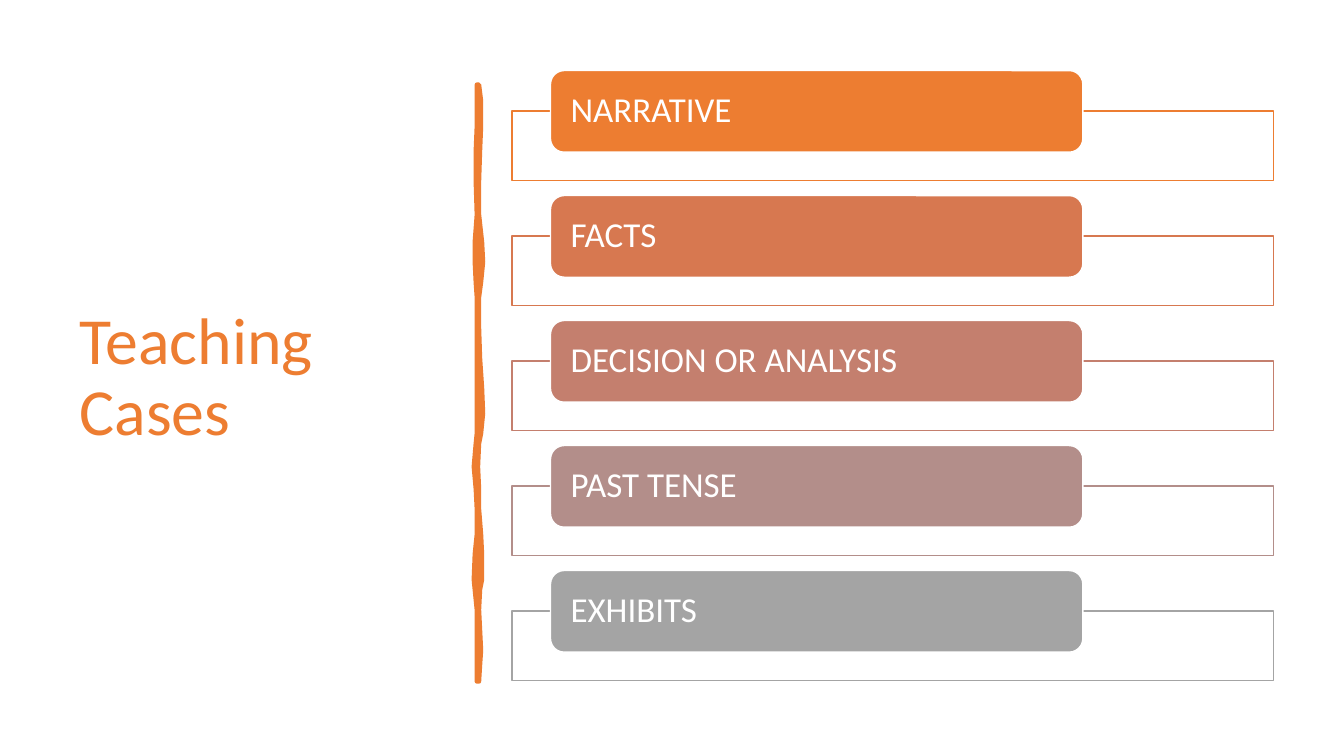
from dataclasses import dataclass

from lxml.etree import SubElement
from pptx import Presentation
from pptx.dml.color import RGBColor
from pptx.enum.shapes import MSO_SHAPE
from pptx.enum.text import MSO_ANCHOR, PP_ALIGN
from pptx.oxml.ns import qn
from pptx.util import Inches, Pt


@dataclass(frozen=True)
class Theme:
    font: str = "Calibri"
    accent: str = "ED7D31"
    white: str = "FFFFFF"
    title: int = 47
    label: int = 25
    thin: float = 1
    brush: float = 3.25


THEME = Theme()

TOPICS = [
    ("NARRATIVE", "ED7D31"),
    ("FACTS", "D77850"),
    ("DECISION OR ANALYSIS", "C47F6E"),
    ("PAST TENSE", "B38E8A"),
    ("EXHIBITS", "A4A4A4"),
]
PITCH = 1.24

# Height on the slide, left edge and right edge of the brush stroke
STROKE = [
    (0.84, 4.73, 4.75), (1.0, 4.73, 4.77), (1.25, 4.73, 4.77),
    (1.5, 4.72, 4.76), (1.8, 4.72, 4.75), (2.13, 4.73, 4.75),
    (2.4, 4.71, 4.78), (2.6, 4.71, 4.79), (2.8, 4.72, 4.77),
    (2.95, 4.73, 4.75), (3.25, 4.73, 4.75), (3.55, 4.73, 4.76),
    (3.85, 4.73, 4.78), (4.1, 4.73, 4.79), (4.3, 4.73, 4.77),
    (4.4, 4.72, 4.75), (4.63, 4.7, 4.74), (4.85, 4.72, 4.75),
    (5.05, 4.73, 4.75), (5.3, 4.73, 4.77), (5.5, 4.71, 4.78),
    (5.75, 4.7, 4.78), (5.85, 4.71, 4.76), (6.05, 4.73, 4.75),
    (6.45, 4.73, 4.77), (6.6, 4.73, 4.76), (6.76, 4.73, 4.75),
]


def paint(shape, fill, line, width):
    shape.shadow.inherit = False
    shape.fill.solid()
    shape.fill.fore_color.rgb = RGBColor.from_string(fill)
    shape.line.color.rgb = RGBColor.from_string(line)
    shape.line.width = Pt(width)


def write(shape, text, size, color, side, edge):
    """Set left-aligned, centred-height text with the given insets."""
    frame = shape.text_frame
    frame.word_wrap = True
    frame.vertical_anchor = MSO_ANCHOR.MIDDLE
    frame.margin_left = frame.margin_right = Inches(side)
    frame.margin_top = frame.margin_bottom = Inches(edge)
    para = frame.paragraphs[0]
    para.text = text
    para.alignment = PP_ALIGN.LEFT
    para.line_spacing = 0.9
    para.font.name = THEME.font
    para.font.size = Pt(size)
    para.font.color.rgb = RGBColor.from_string(color)


def add_title(slide, text):
    box = slide.shapes.add_textbox(Inches(0.69), Inches(0.7), Inches(3.74), Inches(6.11))
    write(box, text, THEME.title, THEME.accent, 0.1, 0.05)


def add_brush(slide):
    """Draw the hand-made divider down one edge and up the other."""
    right = [(Inches(x), Inches(y)) for y, _, x in STROKE]
    left = [(Inches(x), Inches(y)) for y, x, _ in reversed(STROKE)]
    outline = slide.shapes.build_freeform(*right[0])
    outline.add_line_segments(right[1:] + left, close=True)
    brush = outline.convert_to_shape()
    paint(brush, THEME.accent, THEME.accent, THEME.brush)
    SubElement(brush.line._get_or_add_ln(), qn("a:round"))


def add_topic(slide, row, text, color):
    shift = row * PITCH
    frame = slide.shapes.add_shape(
        MSO_SHAPE.RECTANGLE, Inches(5.08), Inches(1.1 + shift), Inches(7.55), Inches(0.69))
    paint(frame, THEME.white, color, THEME.thin)
    tint = frame.fill._xPr.find(qn("a:solidFill"))[0]
    SubElement(tint, qn("a:alpha"), val="90000")

    tab = slide.shapes.add_shape(
        MSO_SHAPE.ROUNDED_RECTANGLE, Inches(5.46), Inches(0.7 + shift), Inches(5.28), Inches(0.81))
    tab.adjustments[0] = 0.167
    paint(tab, color, THEME.white, THEME.thin)
    # The rounded corners already inset the text by about 0.04 inches
    write(tab, text, THEME.label, THEME.white, 0.16, 0)


def main():
    deck = Presentation()
    deck.slide_width, deck.slide_height = Inches(13.33), Inches(7.5)
    slide = deck.slides.add_slide(deck.slide_layouts[6])
    add_title(slide, "Teaching Cases")
    add_brush(slide)
    for row, (text, color) in enumerate(TOPICS):
        add_topic(slide, row, text, color)
    deck.save("out.pptx")


if __name__ == "__main__":
    main()
